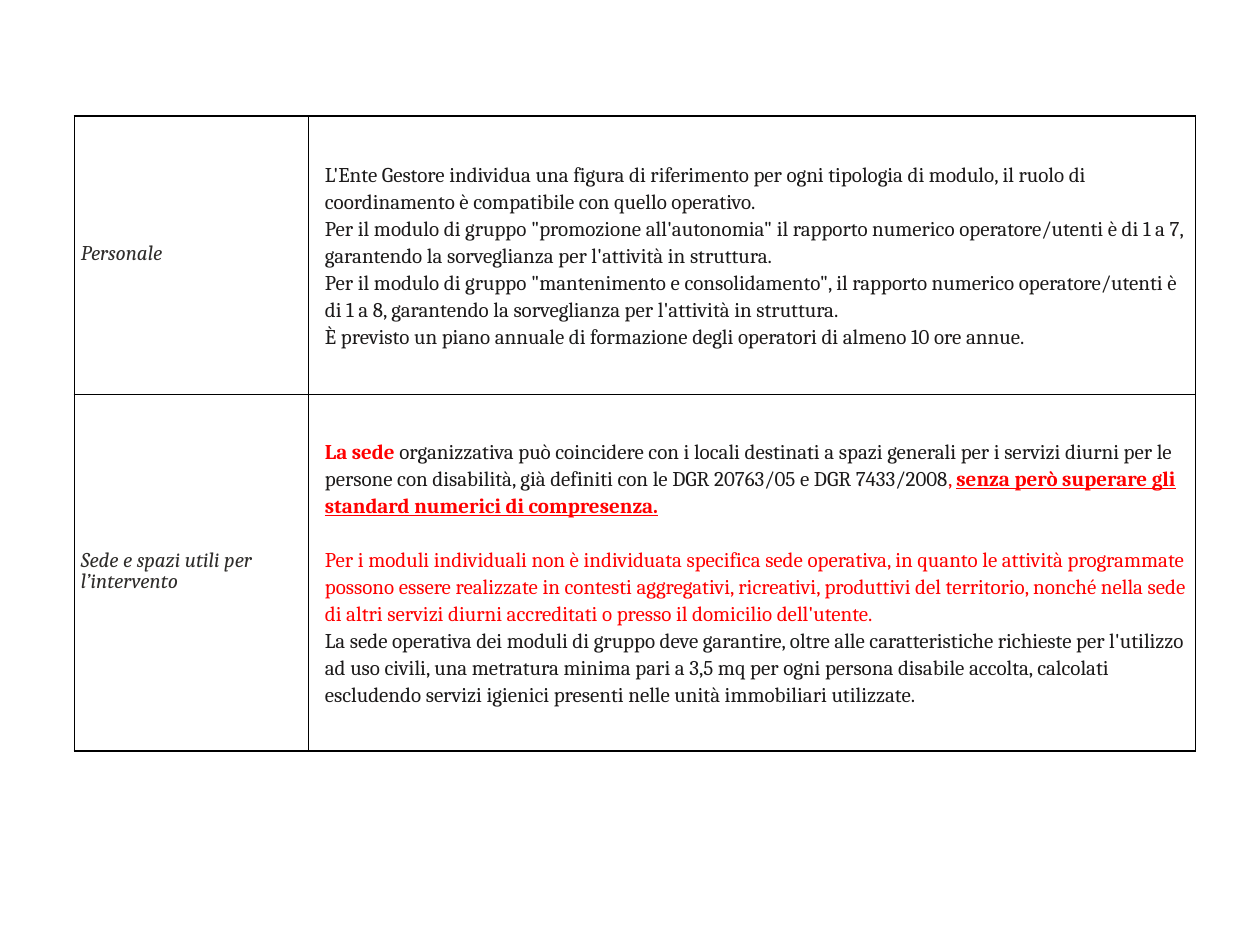
from dataclasses import dataclass

from lxml import etree
from pptx import Presentation
from pptx.dml.color import RGBColor
from pptx.enum.text import MSO_ANCHOR
from pptx.oxml.ns import qn
from pptx.util import Cm, Length, Pt

MIDDLE = MSO_ANCHOR.MIDDLE
FONT = "Cambria"
COLORS = {
    "background": "FFFFFF",
    "border": "000000",
    "label": "2F2D2B",
    "body": "1C1A1A",
    "accent": "FF0000",
}


@dataclass(frozen=True)
class Run:
    text: str
    color: str = "body"
    bold: bool = False
    italic: bool = False
    underline: bool = False


@dataclass(frozen=True)
class TextParagraph:
    runs: tuple[Run, ...]
    space_before: Length = Pt(0)


@dataclass(frozen=True)
class Requirement:
    label: str
    body: tuple[TextParagraph, ...]
    height: Length


REQUIREMENTS = (
    Requirement(
        "Personale",
        tuple(TextParagraph((Run(text),)) for text in (
            "L'Ente Gestore individua una figura di riferimento per ogni tipologia di modulo, "
            "il ruolo di coordinamento è compatibile con quello operativo.",
            "Per il modulo di gruppo \"promozione all'autonomia\" il rapporto numerico "
            "operatore/utenti è di 1 a 7, garantendo la sorveglianza per l'attività in struttura.",
            "Per il modulo di gruppo \"mantenimento e consolidamento\", il rapporto numerico "
            "operatore/utenti è di 1 a 8, garantendo la sorveglianza per l'attività in struttura.",
            "È previsto un piano annuale di formazione degli operatori di almeno 10 ore annue.",
        )),
        Cm(5.61),
    ),
    Requirement(
        "Sede e spazi utili per l’intervento",
        (
            TextParagraph((
                Run("La sede ", "accent", bold=True),
                Run("organizzativa può coincidere con i locali destinati a spazi generali per i "
                    "servizi diurni per le persone con disabilità, già definiti con le "
                    "DGR 20763/05 e DGR 7433/2008"),
                Run(", ", "accent"),
                Run("senza però superare gli standard numerici di compresenza.",
                    "accent", bold=True, underline=True),
            )),
            TextParagraph((
                Run("Per i moduli individuali non è individuata specifica sede operativa, in "
                    "quanto le attività programmate possono essere realizzate in contesti "
                    "aggregativi, ricreativi, produttivi del territorio, nonché nella sede di "
                    "altri servizi diurni accreditati o presso il domicilio dell'utente.",
                    "accent"),
            ), space_before=Pt(15.5)),
            TextParagraph((
                Run("La sede operativa dei moduli di gruppo deve garantire, oltre alle "
                    "caratteristiche richieste per l'utilizzo ad uso civili, una metratura "
                    "minima pari a 3,5 mq per ogni persona disabile accolta, calcolati "
                    "escludendo servizi igienici presenti nelle unità immobiliari utilizzate."),
            )),
        ),
        Cm(7.19),
    ),
)
COLUMN_WIDTHS = (Cm(4.72), Cm(17.88))


def add_run(paragraph, text: str, *, color: str, bold: bool = False,
            italic: bool = False, underline: bool = False) -> None:
    run = paragraph.add_run()
    run.text = text
    font = run.font
    font.name = FONT
    font.size = Pt(12)
    font.bold, font.italic, font.underline = bold, italic, underline
    font.color.rgb = RGBColor.from_string(COLORS[color])


def style_cell(cell) -> None:
    cell.vertical_anchor = MIDDLE
    cell.margin_left = cell.margin_right = Cm(0.08)
    cell.margin_top = cell.margin_bottom = 0
    properties = cell._tc.get_or_add_tcPr()
    for side in ("lnL", "lnR", "lnT", "lnB"):
        line = etree.SubElement(properties, qn(f"a:{side}"), w=str(Pt(1)))
        fill = etree.SubElement(line, qn("a:solidFill"))
        etree.SubElement(fill, qn("a:srgbClr"), val=COLORS["border"])
    cell.fill.solid()
    cell.fill.fore_color.rgb = RGBColor.from_string(COLORS["background"])


def fill_cell(cell, content: tuple[TextParagraph, ...], *, indent: Length,
              line_spacing: Length | float) -> None:
    style_cell(cell)
    frame = cell.text_frame
    for index, item in enumerate(content):
        paragraph = frame.add_paragraph() if index else frame.paragraphs[0]
        paragraph._p.get_or_add_pPr().set("marL", str(indent))
        paragraph.line_spacing = line_spacing
        paragraph.space_before = item.space_before
        for run in item.runs:
            add_run(paragraph, run.text, color=run.color, bold=run.bold,
                    italic=run.italic, underline=run.underline)


def add_requirements_table(slide, requirements: tuple[Requirement, ...]) -> None:
    table = slide.shapes.add_table(
        len(requirements), len(COLUMN_WIDTHS), Cm(1.5), Cm(2.34),
        sum(COLUMN_WIDTHS), sum(item.height for item in requirements)).table
    table.first_row = table.horz_banding = False
    for column, width in zip(table.columns, COLUMN_WIDTHS):
        column.width = width
    for row, item in zip(table.rows, requirements):
        row.height = item.height
        label = TextParagraph((Run(item.label, "label", italic=True),))
        fill_cell(row.cells[0], (label,), indent=Cm(0.05), line_spacing=Pt(12.2))
        fill_cell(row.cells[1], item.body, indent=Cm(0.25), line_spacing=1.12)


def main() -> None:
    presentation = Presentation()
    presentation.slide_width, presentation.slide_height = Cm(25.4), Cm(19.05)
    slide = presentation.slides.add_slide(presentation.slide_layouts[6])

    # Requirements: label on the left, rules on the right
    add_requirements_table(slide, REQUIREMENTS)
    presentation.save("out.pptx")


if __name__ == "__main__":
    main()
